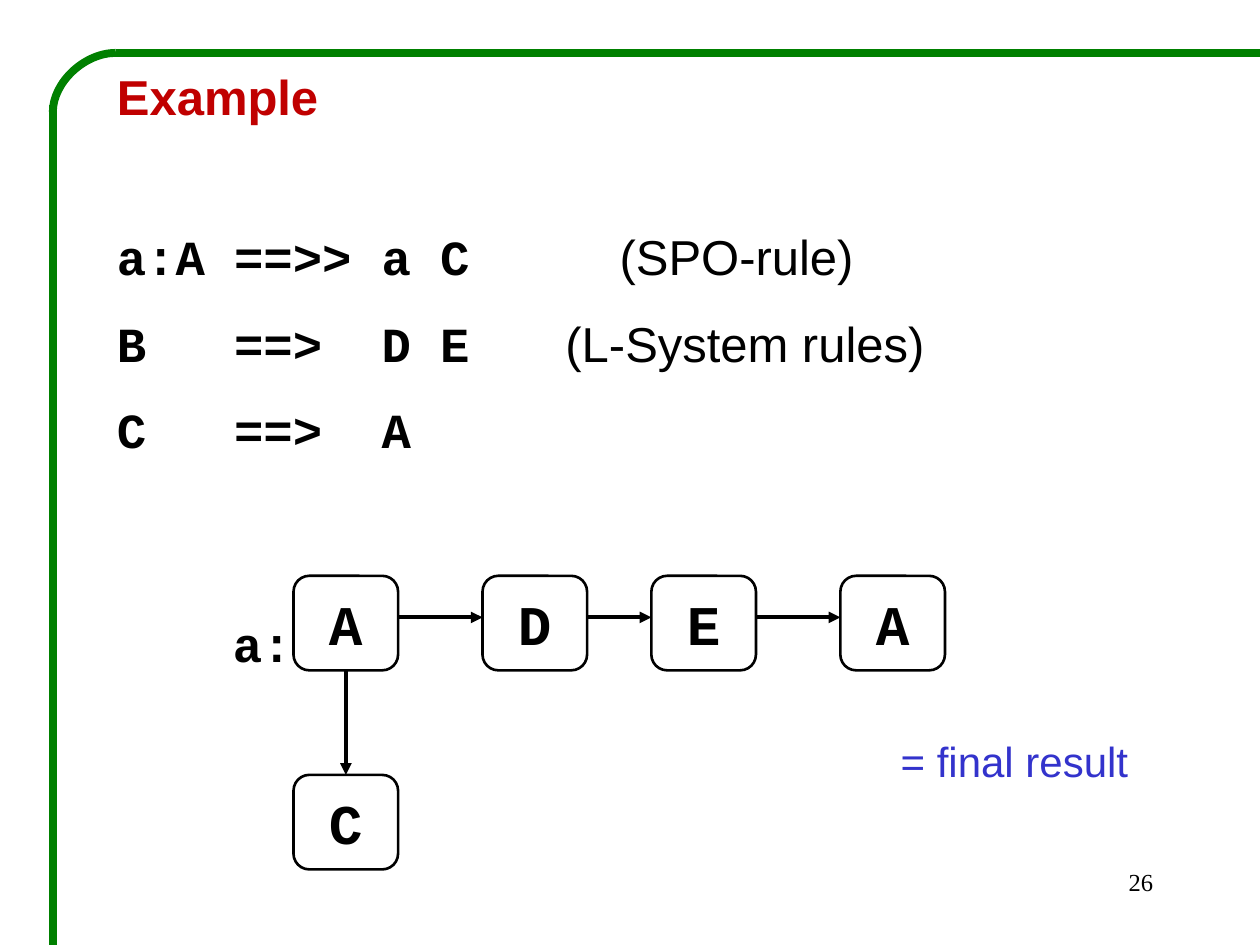
from dataclasses import dataclass

from lxml.etree import SubElement
from pptx import Presentation
from pptx.dml.color import RGBColor
from pptx.enum.shapes import MSO_CONNECTOR, MSO_SHAPE
from pptx.enum.text import MSO_ANCHOR, PP_ALIGN
from pptx.oxml.ns import qn
from pptx.util import Inches, Pt

BLACK = RGBColor(0x00, 0x00, 0x00)
RED = RGBColor(0xC0, 0x00, 0x00)
GREEN = RGBColor(0x00, 0x80, 0x00)
BLUE = RGBColor(0x33, 0x33, 0xCC)
CODE_FONT = "Courier New"
TEXT_FONT = "Arial"

NODE_WIDTH, NODE_HEIGHT = 0.83, 0.75
ROW_TOP, ARROW_Y = 4.57, 4.9
RULE_COLUMNS = (0.93, 2.1)


@dataclass(frozen=True)
class Node:
    label: str
    left: float
    top: float = ROW_TOP


@dataclass(frozen=True)
class Rule:
    left_side: str
    arrow: str
    right_side: str
    note: str = ""
    note_position: float = 0
    space_before: float = 16


CHAIN = (Node("A", 2.33), Node("D", 3.83), Node("E", 5.17), Node("A", 6.67))
BRANCH = Node("C", 2.33, 6.15)
RULES = (
    Rule("a:A", "==>>", "a C", "(SPO-rule)", 3.99, 57.5),
    Rule("B", "==>", "D E", "(L-System rules)", 3.56),
    Rule("C", "==>", "A"),
)


def add_run(paragraph, text: str, *, size: float, font: str = TEXT_FONT,
            color: RGBColor = BLACK, bold: bool = False) -> None:
    run = paragraph.add_run()
    run.text = text
    run.font.size = Pt(size)
    run.font.name = font
    run.font.bold = bold
    run.font.color.rgb = color


def add_text(slide, left: float, top: float, width: float, height: float, text: str, *,
             top_inset: float = 0.05, align=PP_ALIGN.LEFT, **run_format):
    frame = slide.shapes.add_textbox(
        Inches(left), Inches(top), Inches(width), Inches(height)).text_frame
    frame.word_wrap = True
    frame.margin_top = Inches(top_inset)
    frame.paragraphs[0].alignment = align
    add_run(frame.paragraphs[0], text, **run_format)
    return frame


def add_rule(frame, rule: Rule) -> None:
    """Append a rule whose parts are aligned on tab stops."""
    paragraph = frame.add_paragraph()
    paragraph.space_before = Pt(rule.space_before)
    stops = RULE_COLUMNS + ((rule.note_position,) if rule.note else ())
    tab_list = SubElement(paragraph._p.get_or_add_pPr(), qn("a:tabLst"))
    for stop in stops:
        SubElement(tab_list, qn("a:tab"), pos=str(Inches(stop)), algn="l")
    code = "\t".join((rule.left_side, rule.arrow, rule.right_side))
    add_run(paragraph, code, size=28, font=CODE_FONT, bold=True)
    if rule.note:
        add_run(paragraph, "\t" + rule.note, size=28)


def add_node(slide, node: Node):
    shape = slide.shapes.add_shape(
        MSO_SHAPE.ROUNDED_RECTANGLE, Inches(node.left), Inches(node.top),
        Inches(NODE_WIDTH), Inches(NODE_HEIGHT))
    shape.shadow.inherit = False
    shape.fill.background()
    shape.line.color.rgb = BLACK
    shape.line.width = Pt(1.5)
    frame = shape.text_frame
    frame.vertical_anchor = MSO_ANCHOR.MIDDLE
    frame.paragraphs[0].alignment = PP_ALIGN.CENTER
    add_run(frame.paragraphs[0], node.label, size=32, font=CODE_FONT, bold=True)
    return shape


def add_line(slide, start: tuple[float, float], end: tuple[float, float], *,
             color: RGBColor = BLACK, width: float = 2.25, arrow: bool = False,
             kind=MSO_CONNECTOR.STRAIGHT):
    connector = slide.shapes.add_connector(
        kind, Inches(start[0]), Inches(start[1]), Inches(end[0]), Inches(end[1]))
    connector.line.color.rgb = color
    connector.line.width = Pt(width)
    if arrow:
        SubElement(connector.line._get_or_add_ln(), qn("a:tailEnd"), type="triangle")
    SubElement(connector._element.spPr, qn("a:effectLst"))
    return connector


def add_frame(slide) -> None:
    """Draw the green border with its rounded corner."""
    border = {"color": GREEN, "width": 4.5}
    add_line(slide, (10, 0.42), (0.92, 0.42), **border)
    add_line(slide, (0.42, 0.83), (0.42, 7.5), **border)
    corner = add_line(slide, (0.92, 0.42), (0.42, 0.89), kind=MSO_CONNECTOR.CURVE, **border)
    corner._element.spPr.find(qn("a:prstGeom")).set("prst", "curvedConnector2")


def add_graph(slide) -> None:
    shapes = [add_node(slide, node) for node in CHAIN]
    branch_shape = add_node(slide, BRANCH)
    for source, target in zip(CHAIN, CHAIN[1:]):
        add_line(slide, (source.left + NODE_WIDTH, ARROW_Y), (target.left, ARROW_Y), arrow=True)
    center = BRANCH.left + NODE_WIDTH / 2
    branch = add_line(slide, (center, ROW_TOP + NODE_HEIGHT), (center, BRANCH.top), arrow=True)
    branch.begin_connect(shapes[0], 2)
    branch.end_connect(branch_shape, 0)
    add_text(slide, 1.75, 4.73, 0.67, 0.57, "a:", top_inset=0.14,
             size=28, font=CODE_FONT, bold=True)


def main() -> None:
    presentation = Presentation()
    presentation.slide_width = Inches(10)
    presentation.slide_height = Inches(7.5)
    slide = presentation.slides.add_slide(presentation.slide_layouts[6])

    add_frame(slide)
    add_graph(slide)
    add_text(slide, 7.05, 5.76, 2.68, 0.5, "= final result", top_inset=0.08,
             size=24, color=BLUE)
    add_text(slide, 7.17, 6.83, 2.08, 0.5, "26", align=PP_ALIGN.RIGHT,
             size=14, font="Times New Roman")
    body = add_text(slide, 0.83, 0.44, 8.67, 3.37, "Example", top_inset=0.09,
                    size=28, color=RED, bold=True)
    for rule in RULES:
        add_rule(body, rule)

    presentation.save("out.pptx")


if __name__ == "__main__":
    main()
